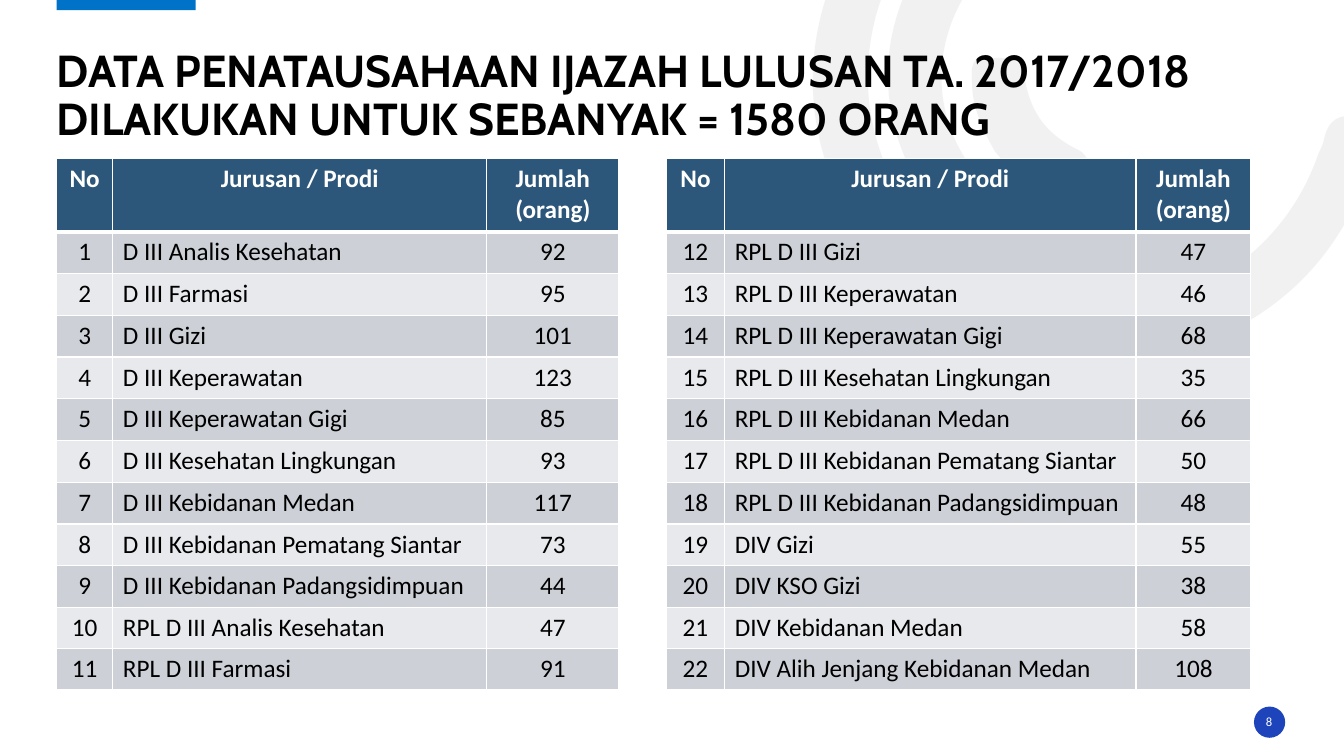
from dataclasses import dataclass
from math import cos, radians, sin

from lxml.etree import SubElement
from pptx import Presentation
from pptx.dml.color import RGBColor
from pptx.enum.shapes import MSO_SHAPE
from pptx.enum.text import MSO_ANCHOR, MSO_AUTO_SIZE, PP_ALIGN
from pptx.oxml.ns import qn
from pptx.util import Inches, Pt


@dataclass(frozen=True)
class Theme:
    """Colours, fonts and type sizes of the slide."""
    white: str = "FFFFFF"
    black: str = "000000"
    swirl: str = "E7E6E6"
    accent: str = "0072C7"
    badge: str = "1E44BC"
    header: str = "2C567A"
    bands: tuple = ("CDD1D7", "E8E9EC")
    heading_font: str = "Cabin"
    body_font: str = "Calibri"
    title_size: int = 32
    table_size: int = 18
    number_size: int = 9


THEME = Theme()
HEADINGS = ("No", "Jurusan / Prodi", "Jumlah (orang)")
GRADUATES = [
    ("D III Analis Kesehatan", 92), ("D III Farmasi", 95), ("D III Gizi", 101),
    ("D III Keperawatan", 123), ("D III Keperawatan Gigi", 85),
    ("D III Kesehatan Lingkungan", 93), ("D III Kebidanan Medan", 117),
    ("D III Kebidanan Pematang Siantar", 73),
    ("D III Kebidanan Padangsidimpuan", 44),
    ("RPL D III Analis Kesehatan", 47), ("RPL D III Farmasi", 91),
    ("RPL D III Gizi", 47), ("RPL D III Keperawatan", 46),
    ("RPL D III Keperawatan Gigi", 68), ("RPL D III Kesehatan Lingkungan", 35),
    ("RPL D III Kebidanan Medan", 66),
    ("RPL D III Kebidanan Pematang Siantar", 50),
    ("RPL D III Kebidanan Padangsidimpuan", 48), ("DIV Gizi", 55),
    ("DIV KSO Gizi", 38), ("DIV Kebidanan Medan", 58),
    ("DIV Alih Jenjang Kebidanan Medan", 108),
]
ROWS_PER_TABLE = 11
SWIRL_ANGLE = 144.2
SWIRLS = [
    ((2.69, 3.08), [
        (0.64, 4.39), (0.12, 3.59), (0, 2.6), (0.51, 1.6), (1.03, 0.58), (1.89, 0.07),
        (3.03, 0.03), (3.18, 0.03), (3.34, 0), (3.44, 0.15), (3.57, 0.35), (3.4, 0.56),
        (3.11, 0.56), (1.8, 0.56), (0.78, 1.51), (0.73, 2.78), (0.69, 3.91), (1.49, 4.91),
        (2.59, 5.12), (3.73, 5.34), (4.83, 4.71), (5.2, 3.62), (5.22, 3.58), (5.24, 3.54),
        (5.25, 3.5), (5.29, 3.29), (5.4, 3.21), (5.62, 3.27), (5.86, 3.34), (5.8, 3.51),
        (5.74, 3.66), (5.47, 4.55), (4.91, 5.17), (4.04, 5.51), (2.83, 5.97), (1.49, 5.55),
        (0.64, 4.39)]),
    ((2.2, 3.45), [
        (1.35, 4.09), (0.75, 3.25), (0.82, 2.17), (1.53, 1.42), (1.64, 1.31), (1.75, 1.15),
        (1.93, 1.32), (2.08, 1.46), (2.1, 1.6), (1.92, 1.78), (1.38, 2.36), (1.33, 3.18),
        (1.78, 3.78), (2.21, 4.39), (3.01, 4.59), (3.74, 4.25), (3.95, 4.15), (4.06, 4.22),
        (4.16, 4.39), (4.26, 4.6), (4.1, 4.66), (3.96, 4.73), (3.09, 5.2), (1.96, 4.92),
        (1.35, 4.09)]),
    ((2.32, 3.38), [
        (2, 3.61), (1.88, 3.4), (1.77, 3.17), (1.77, 2.92), (1.77, 2.83), (1.74, 2.67),
        (1.89, 2.68), (2.05, 2.69), (2.26, 2.63), (2.29, 2.86), (2.34, 3.2), (2.49, 3.42),
        (2.8, 3.58), (3.01, 3.67), (2.89, 3.86), (2.85, 3.99), (2.81, 4.16), (2.68, 4.08),
        (2.58, 4.04), (2.34, 3.97), (2.16, 3.8), (2, 3.61)]),
]


def format_text(paragraph, text, color, align=PP_ALIGN.LEFT, **values):
    """Write one paragraph and apply its font values."""
    paragraph.text = text
    paragraph.alignment = align
    for attribute, value in values.items():
        setattr(paragraph.font, attribute, value)
    paragraph.font.color.rgb = RGBColor.from_string(color)


def paint(shape, color):
    """Give a shape a flat fill without outline or shadow."""
    shape.shadow.inherit = False
    shape.fill.solid()
    shape.fill.fore_color.rgb = RGBColor.from_string(color)
    shape.line.fill.background()


def turn_back(point, centre):
    """Rotate a point about the centre against the swirl angle."""
    angle = radians(-SWIRL_ANGLE)
    dx, dy = point[0] - centre[0], point[1] - centre[1]
    return (centre[0] + dx * cos(angle) - dy * sin(angle),
            centre[1] + dx * sin(angle) + dy * cos(angle))


def bend_outline(shape):
    """Turn each three line segments of an outline into one cubic curve."""
    outline = next(shape._element.iter(qn("a:path")))
    segments = outline.findall(qn("a:lnTo"))
    for start in range(0, len(segments) - 2, 3):
        curve = SubElement(outline, qn("a:cubicBezTo"))
        segments[start].addprevious(curve)
        for segment in segments[start:start + 3]:
            curve.append(segment[0])
            outline.remove(segment)


def add_swirls(slide, left, top):
    """Draw the group of pale swirl arcs from the given corner."""
    swirls = slide.shapes.add_group_shape()
    for centre, controls in SWIRLS:
        points = [(Inches(left + x), Inches(top + y))
                  for x, y in (turn_back(control, centre) for control in controls)]
        outline = swirls.shapes.build_freeform(*points[0])
        outline.add_line_segments(points[1:], close=True)
        swirl = outline.convert_to_shape()
        bend_outline(swirl)
        swirl.rotation = SWIRL_ANGLE
        paint(swirl, THEME.swirl)
        color = swirl._element.spPr.find(f"{qn('a:solidFill')}/{qn('a:srgbClr')}")
        SubElement(color, qn("a:alpha"), val="53000")


def add_accent_bar(slide, left, top, width, height):
    """Draw the bar at the top edge."""
    bar = slide.shapes.add_shape(MSO_SHAPE.RECTANGLE, *map(Inches, (left, top, width, height)))
    bar.rotation = 180
    paint(bar, THEME.accent)


def format_frame(frame, anchor):
    """Remove the margins of a text frame and set its behaviour."""
    values = dict(margin_left=0, margin_top=0, margin_right=0, margin_bottom=0,
                  word_wrap=True, auto_size=MSO_AUTO_SIZE.NONE, vertical_anchor=anchor)
    for attribute, value in values.items():
        setattr(frame, attribute, value)


def add_page_number(slide, left, top, size, number):
    """Draw the round badge with the page number."""
    badge = slide.shapes.add_shape(MSO_SHAPE.OVAL, *map(Inches, (left, top, size, size)))
    paint(badge, THEME.badge)
    label = slide.shapes.add_textbox(*map(Inches, (left - 0.01, top + 0.05, size + 0.01, 0.2)))
    format_frame(label.text_frame, MSO_ANCHOR.MIDDLE)
    format_text(label.text_frame.paragraphs[0], number, THEME.white, PP_ALIGN.CENTER,
                name=THEME.body_font, size=Pt(THEME.number_size))


def add_title(slide, left, top, width, height, text):
    """Place and format the title in front of the decoration."""
    title = slide.shapes.title
    slide.shapes._spTree.append(title._element)
    title.left, title.top, title.width, title.height = map(Inches, (left, top, width, height))
    format_frame(title.text_frame, MSO_ANCHOR.BOTTOM)
    heading = title.text_frame.paragraphs[0]
    format_text(heading, text, THEME.black, name=THEME.heading_font,
                size=Pt(THEME.title_size), bold=True)
    heading.line_spacing = 0.9


def add_borders(cell, bottom):
    """Draw white borders around a cell, with the bottom width in points."""
    properties = cell._tc.get_or_add_tcPr()
    for side, width in dict(lnL=1, lnR=1, lnT=1, lnB=bottom).items():
        border = SubElement(properties, qn(f"a:{side}"), w=str(Pt(width)))
        fill = SubElement(border, qn("a:solidFill"))
        SubElement(fill, qn("a:srgbClr"), val=THEME.white)


def add_graduates(slide, left, top, height, column_widths, first):
    """Add a table of study programmes numbered from first."""
    programmes = GRADUATES[first - 1:first - 1 + ROWS_PER_TABLE]
    records = [HEADINGS] + [(number, *programme)
                            for number, programme in enumerate(programmes, first)]
    header_height, last_height = 0.73, 0.4
    body_height = (height - header_height - 2 * last_height) / (ROWS_PER_TABLE - 2)
    row_heights = [header_height] + [body_height] * (ROWS_PER_TABLE - 2) + [last_height] * 2
    table = slide.shapes.add_table(
        len(records), len(HEADINGS),
        *map(Inches, (left, top, sum(column_widths), height))).table
    for column, width in zip(table.columns, column_widths):
        column.width = Inches(width)
    for row_index, (record, row_height) in enumerate(zip(records, row_heights)):
        table.rows[row_index].height = Inches(row_height)
        is_header = row_index == 0
        background = THEME.header if is_header else THEME.bands[(row_index - 1) % 2]
        for column_index, value in enumerate(record):
            cell = table.cell(row_index, column_index)
            add_borders(cell, 3 if is_header else 1)
            cell.fill.solid()
            cell.fill.fore_color.rgb = RGBColor.from_string(background)
            centred = is_header or column_index != 1
            format_text(cell.text_frame.paragraphs[0], str(value),
                        THEME.white if is_header else THEME.black,
                        PP_ALIGN.CENTER if centred else PP_ALIGN.LEFT,
                        name=THEME.body_font, size=Pt(THEME.table_size), bold=is_header)


def main():
    """Build and save the slide."""
    deck = Presentation()
    deck.slide_width, deck.slide_height = Inches(40 / 3), Inches(7.5)
    slide = deck.slides.add_slide(deck.slide_layouts[5])
    add_swirls(slide, 7.87, -2.1)
    add_accent_bar(slide, 0.56, -0.02, 1.38, 0.12)
    add_page_number(slide, 12.44, 7.01, 0.31, "8")
    add_title(slide, 0.56, 0.27, 12.19, 1.17,
              "DATA PENATAUSAHAAN IJAZAH LULUSAN TA. 2017/2018 "
              "DILAKUKAN UNTUK SEBANYAK = 1580 ORANG")
    add_graduates(slide, 0.56, 1.57, 5.26, (0.56, 3.71, 1.31), 1)
    add_graduates(slide, 6.61, 1.57, 5.26, (0.58, 4.08, 1.14), ROWS_PER_TABLE + 1)
    deck.save("out.pptx")


if __name__ == "__main__":
    main()
